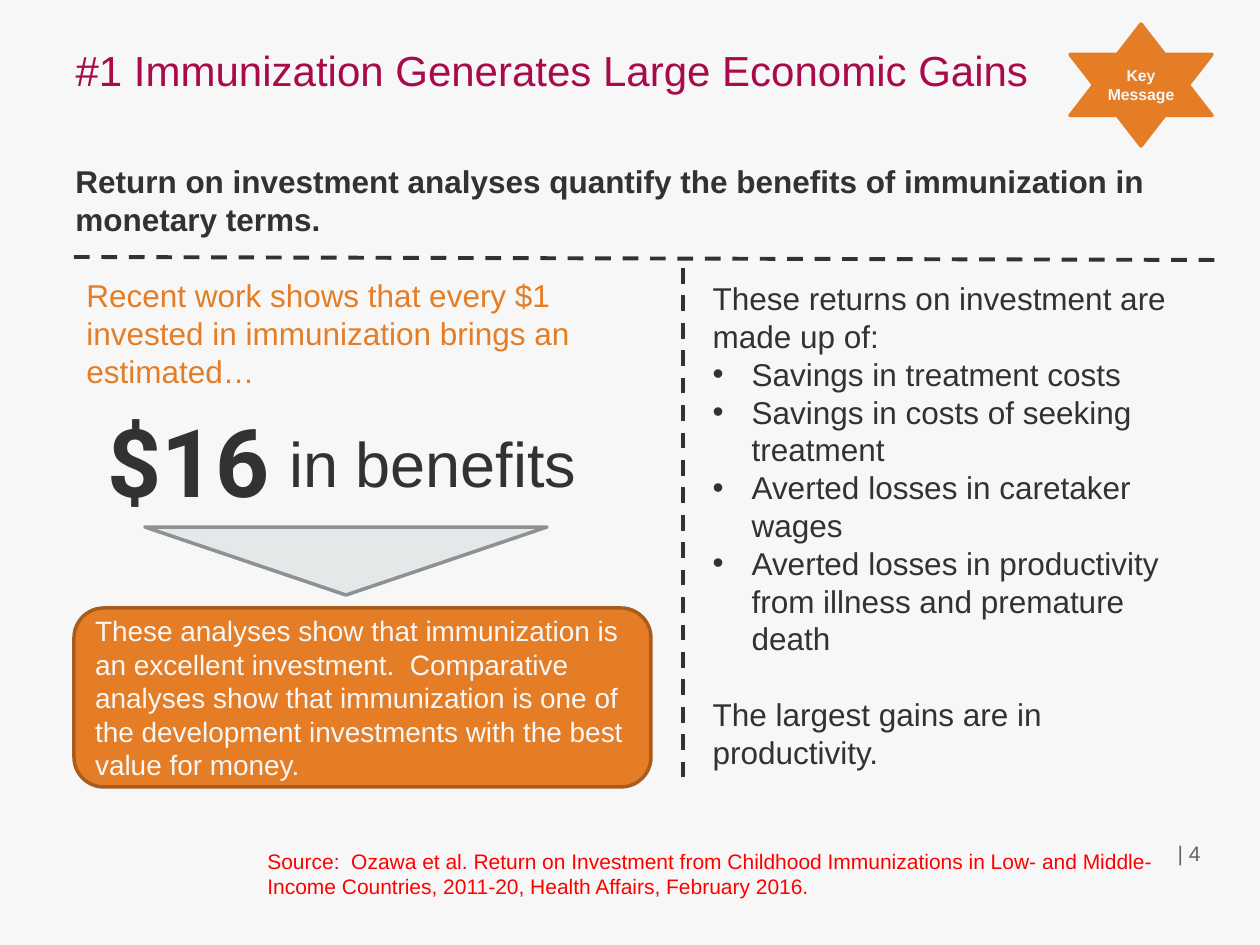
from lxml import etree
from pptx import Presentation
from pptx import util as u
from pptx.dml import color
from pptx.enum import dml, shapes, text
from pptx.oxml import ns

INK, ORANGE, PALE = "313231", "E47D25", "F7F7F7"
LEFT, MID, RIGHT = text.PP_ALIGN.LEFT, text.PP_ALIGN.CENTER, text.PP_ALIGN.RIGHT
TOP, CENTER = text.MSO_ANCHOR.TOP, text.MSO_ANCHOR.MIDDLE


def px(n):
    """Turn px into EMU at 126 px to the inch."""
    return u.Emu(round(n * 914400 / 126))


def rgb(code):
    """Turn a hex string into a colour."""
    return color.RGBColor.from_string(code)


def write(shape, lines, size, ink, bold=False, align=LEFT, font="Arial", anchor=TOP, wrap=True):
    """Fill a shape with evenly formatted paragraphs."""
    frame = shape.text_frame
    frame.text = "\n".join(lines)
    frame.auto_size = text.MSO_AUTO_SIZE.NONE
    frame.word_wrap = wrap
    frame.vertical_anchor = anchor
    for para in frame.paragraphs:
        para.alignment = align
        para.space_before = u.Pt(0)
        for run in para.runs:
            run.font.name, run.font.size, run.font.bold = font, u.Pt(size), bold
            run.font.color.rgb = rgb(ink)


def place(shape, x, y, w, h):
    """Move a placeholder to a box."""
    shape.left, shape.top, shape.width, shape.height = map(px, (x, y, w, h))


def label(slide, box, words, size, ink, **look):
    """Add a text box."""
    write(slide.shapes.add_textbox(*map(px, box)), words.split("\n"), size, ink, **look)


def form(slide, kind, box, fill, edge):
    """Add a filled preset shape."""
    shape = slide.shapes.add_shape(kind, *map(px, box))
    shape.shadow.inherit = False
    shape.fill.solid()
    shape.fill.fore_color.rgb = rgb(fill)
    shape.line.color.rgb = rgb(edge)
    shape.line.width = u.Pt(2)
    return shape


def dash(slide, *ends):
    """Add a dashed divider."""
    line = slide.shapes.add_connector(shapes.MSO_CONNECTOR.STRAIGHT, *map(px, ends))
    line.line.color.rgb = rgb(INK)
    line.line.width = u.Pt(2.25)
    line.line.dash_style = dml.MSO_LINE.DASH
    etree.SubElement(line._element.spPr, ns.qn("a:effectLst"))


def head(slide, x, y, w):
    """Place the title, key message star, lead and rule."""
    title = slide.shapes.title
    place(title, x, y, w, 158)
    write(title, ["#1 Immunization Generates Large Economic Gains"], 24, "A80A4B")
    star = form(slide, shapes.MSO_SHAPE.STAR_6_POINT, (x + 1007, y - 14, 142, 122), ORANGE, ORANGE)
    write(star, ["Key Message"], 9, PALE, bold=True, align=MID, anchor=CENTER)
    label(slide, (x, y + 118, w + 4, 90),
          "Return on investment analyses quantify the benefits of immunization in monetary terms.",
          18, INK, bold=True)
    dash(slide, x + 11, y + 219, x + 1158, y + 222)


def claim(slide, x, y, w):
    """Place the return figure, arrow and conclusion."""
    label(slide, (x, y, w + 15, 127),
          "Recent work shows that every $1 invested in immunization brings an estimated…", 18, ORANGE)
    label(slide, (x - 14, y + 127, 257, 127), "$16", 54, INK, bold=True, align=MID, font="Roboto")
    label(slide, (x + 203, y + 148, 349, 90), "in benefits", 36, INK)
    form(slide, shapes.MSO_SHAPE.FLOWCHART_MERGE, (x + 71, y + 257, 402, 68), "E5E8E9", "8C9293")
    card = form(slide, shapes.MSO_SHAPE.ROUNDED_RECTANGLE, (x, y + 338, w, 179), ORANGE, "A95C1B")
    write(card, ["These analyses show that immunization is an excellent investment.  Comparative analyses "
                 "show that immunization is one of the development investments with the best value for "
                 "money."], 16, PALE, anchor=CENTER)


def parts(slide, x, y, w, h):
    """Place the divider and the list of returns."""
    dash(slide, x - 17, y - 5, x - 17, y + h)
    body = slide.placeholders[1]
    place(body, x, y, w, h)
    write(body, [
        "These returns on investment are made up of:",
        "Savings in treatment costs",
        "Savings in costs of seeking treatment",
        "Averted losses in caretaker wages",
        "Averted losses in productivity from illness and premature death",
        "The largest gains are in productivity.",
    ], 18, INK)
    paras = body.text_frame.paragraphs
    for para in paras:
        props = para._p.get_or_add_pPr()
        item = para not in (paras[0], paras[-1])
        indent = px(39) if item else 0
        props.set("marL", str(indent))
        props.set("indent", str(-indent))
        if item:
            etree.SubElement(props, ns.qn("a:buChar"), char="•")
        else:
            etree.SubElement(props, ns.qn("a:buNone"))
    paras[-1].space_before = u.Pt(21.6)


def foot(slide, x, y):
    """Place the source and the page number."""
    label(slide, (x, y, 929, 63),
          "Source:  Ozawa et al. Return on Investment from Childhood Immunizations in Low- and Middle-\n"
          "Income Countries, 2011-20, Health Affairs, February 2016.", 12, "FF0000", wrap=False)
    label(slide, (x + 664, y - 14, 294, 50), "| 4", 12, "636466", align=RIGHT, anchor=CENTER)


def main():
    """Build and save the slide."""
    deck = Presentation()
    deck.slide_width, deck.slide_height = px(1260), px(945)
    slide = deck.slides.add_slide(deck.slide_layouts[1])
    slide.background.fill.solid()
    slide.background.fill.fore_color.rgb = rgb(PALE)
    head(slide, 63, 38, 1134)
    claim(slide, 74, 270, 577)
    parts(slide, 700, 273, 520, 509)
    foot(slide, 255, 842)
    deck.save("out.pptx")


if __name__ == "__main__":
    main()
